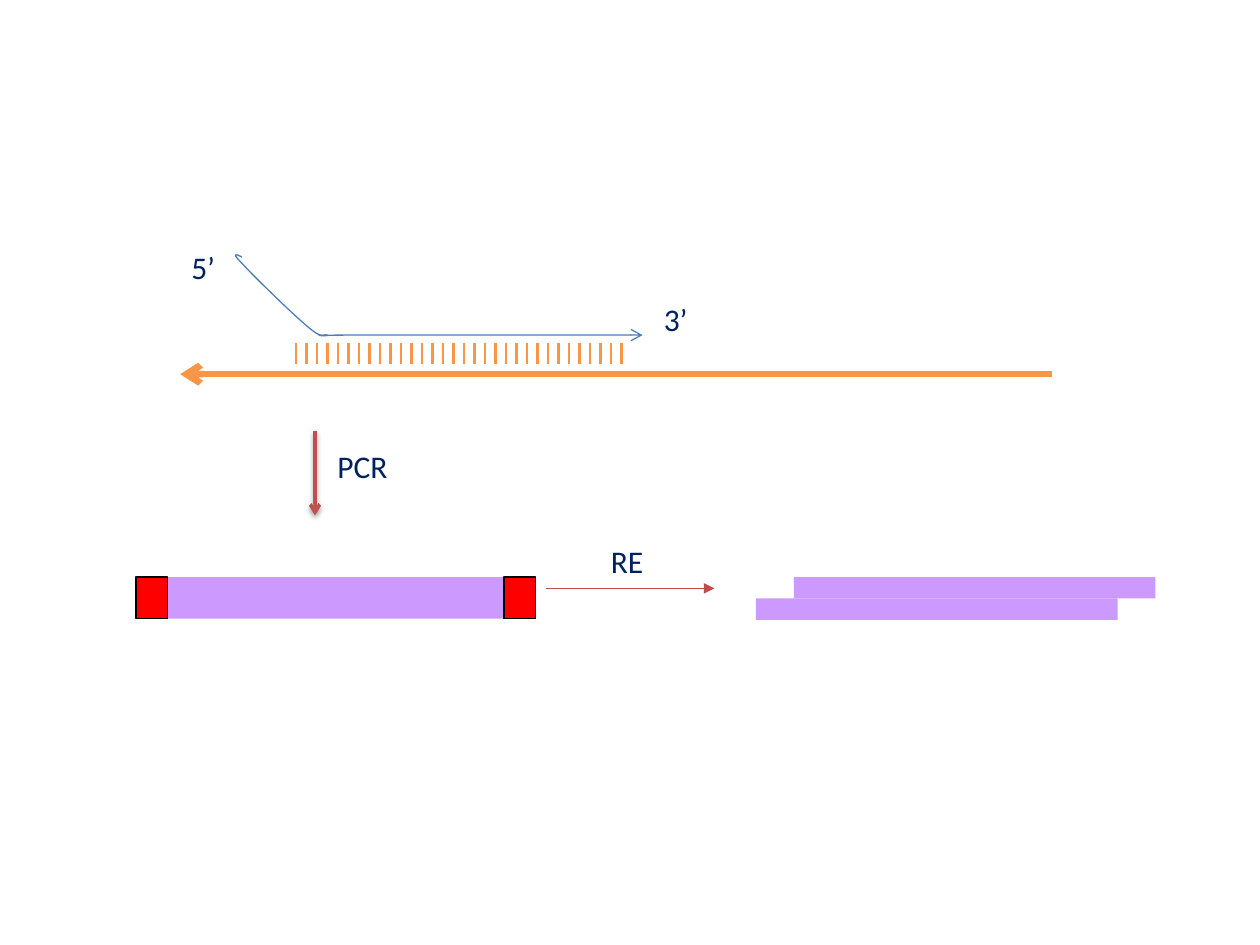
from dataclasses import dataclass

from lxml import etree
from pptx import Presentation
from pptx.dml.color import RGBColor
from pptx.enum.shapes import MSO_CONNECTOR, MSO_SHAPE
from pptx.enum.text import MSO_AUTO_SIZE
from pptx.oxml.ns import qn
from pptx.util import Inches, Pt

LINE = MSO_CONNECTOR.STRAIGHT
RECT = MSO_SHAPE.RECTANGLE
GROW = MSO_AUTO_SIZE.SHAPE_TO_FIT_TEXT

NAVY = RGBColor(0x00, 0x20, 0x60)
BLUE = RGBColor(0x4B, 0x7E, 0xBC)
ORANGE = RGBColor(0xF7, 0x96, 0x46)
LILAC = RGBColor(0xCC, 0x99, 0xFF)
RED = RGBColor(0xFF, 0x00, 0x00)
BRICK = RGBColor(0xC0, 0x50, 0x4D)
RUST = RGBColor(0xBF, 0x4C, 0x48)
BLACK = RGBColor(0x00, 0x00, 0x00)

STEPS = 12
TICKS = 32
PITCH = 1 / 12


@dataclass
class Bar:
    left: float
    top: float
    width: float
    height: float
    fill: RGBColor
    edge: RGBColor | None = None


@dataclass
class Label:
    text: str
    left: float
    top: float
    width: float
    wrap: bool


@dataclass
class Stroke:
    start: tuple[float, float]
    end: tuple[float, float]
    color: RGBColor
    weight: float
    head: str = ""
    tail: str = ""
    shadow: bool = False


PRODUCT = Bar(1.08, 4.58, 3.17, 0.33, LILAC)
SITES = [Bar(x, 4.58, 0.25, 0.33, RED, BLACK) for x in (4, 1.08)]
STRANDS = [Bar(6.3, 4.58, 2.87, 0.17, LILAC), Bar(6, 4.75, 2.87, 0.17, LILAC)]
ARROWS = [
    Stroke((4.33, 4.67), (5.67, 4.67), RUST, 0.75, tail="triangle"),
    Stroke((1.43, 2.97), (8.35, 2.97), ORANGE, 3.75, head="arrow"),
    Stroke((2.5, 3.42), (2.5, 4.09), BRICK, 2, tail="arrow", shadow=True),
]
LABELS = [
    Label("5’", 1.42, 1.92, 0.5, True),
    Label("3’", 5.17, 2.33, 0.5, True),
    Label("RE", 4.75, 4.25, 0.5, False),
    Label("PCR", 2.58, 3.5, 0.65, False),
]
PRIMER = (5.1, 2.66)
CURVES = [
    ((4.13, 2.66), (3.17, 2.66), (2.75, 2.66)),
    ((2.34, 2.66), (2.65, 2.67), (2.6, 2.66)),
    ((2.55, 2.65), (2.56, 2.69), (2.45, 2.6)),
    ((2.34, 2.51), (2.01, 2.19), (1.92, 2.09)),
    ((1.83, 2), (1.88, 2.02), (1.92, 2.04)),
]


def add_tip(shape, end: str, kind: str) -> None:
    """Put an arrowhead on one end (headEnd or tailEnd) of a line."""
    line = shape.element.spPr.find(qn("a:ln"))
    etree.SubElement(line, qn(f"a:{end}"), type=kind)


def add_shadow(effects) -> None:
    cast = etree.SubElement(
        effects, qn("a:outerShdw"), blurRad=str(Pt(3.1)),
        dist=str(Pt(1.6)), dir="5400000", rotWithShape="0",
    )
    color = etree.SubElement(cast, qn("a:srgbClr"), val=str(BLACK))
    etree.SubElement(color, qn("a:alpha"), val="38000")


def draw_bar(shapes, bar: Bar) -> None:
    rect = shapes.add_shape(
        RECT, Inches(bar.left), Inches(bar.top), Inches(bar.width), Inches(bar.height)
    )
    rect.shadow.inherit = False
    rect.fill.solid()
    rect.fill.fore_color.rgb = bar.fill
    if bar.edge is None:
        rect.line.fill.background()
    else:
        rect.line.color.rgb = bar.edge
        rect.line.width = Pt(0.75)


def draw_stroke(shapes, stroke: Stroke) -> None:
    ends = [Inches(v) for v in (*stroke.start, *stroke.end)]
    line = shapes.add_connector(LINE, *ends)
    line.line.color.rgb = stroke.color
    line.line.width = Pt(stroke.weight)
    if stroke.head:
        add_tip(line, "headEnd", stroke.head)
    if stroke.tail:
        add_tip(line, "tailEnd", stroke.tail)
    effects = etree.SubElement(line.element.spPr, qn("a:effectLst"))
    if stroke.shadow:
        add_shadow(effects)


def trace(start: tuple, curves: list) -> list[tuple[int, int]]:
    """Sample a chain of cubic curves as points along it."""
    points = []
    for a, b, end in curves:
        for step in range(1, STEPS + 1):
            t = step / STEPS
            u = 1 - t
            x, y = (
                u**3 * p + 3 * u * u * t * q + 3 * u * t * t * r + t**3 * s
                for p, q, r, s in zip(start, a, b, end)
            )
            points.append((Inches(x), Inches(y)))
        start = end
    return points


def draw_primer(shapes) -> None:
    x, y = PRIMER
    path = shapes.build_freeform(Inches(x), Inches(y))
    path.add_line_segments(trace(PRIMER, CURVES), close=False)
    shape = path.convert_to_shape()
    shape.shadow.inherit = False
    shape.fill.background()
    shape.line.color.rgb = BLUE
    shape.line.width = Pt(0.75)
    add_tip(shape, "headEnd", "arrow")


def draw_label(shapes, label: Label) -> None:
    box = shapes.add_textbox(
        Inches(label.left), Inches(label.top), Inches(label.width), Inches(0.4)
    )
    frame = box.text_frame
    frame.word_wrap = label.wrap
    frame.auto_size = GROW
    para = frame.paragraphs[0]
    para.text = label.text
    para.font.name = "Calibri"
    para.font.size = Pt(18)
    para.font.color.rgb = NAVY


def main() -> None:
    deck = Presentation()
    deck.slide_width, deck.slide_height = Inches(10), Inches(7.5)
    shapes = deck.slides.add_slide(deck.slide_layouts[6]).shapes

    draw_bar(shapes, PRODUCT)
    pair = shapes.add_group_shape().shapes
    for strand in STRANDS:
        draw_bar(pair, strand)
    for i in range(TICKS):
        x = 2.35 + i * PITCH
        draw_stroke(shapes, Stroke((x, 2.72), (x, 2.89), ORANGE, 1.5))
    draw_primer(shapes)
    for site in SITES:
        draw_bar(shapes, site)
    for arrow in ARROWS:
        draw_stroke(shapes, arrow)
    for label in LABELS:
        draw_label(shapes, label)

    deck.save("out.pptx")


if __name__ == "__main__":
    main()
